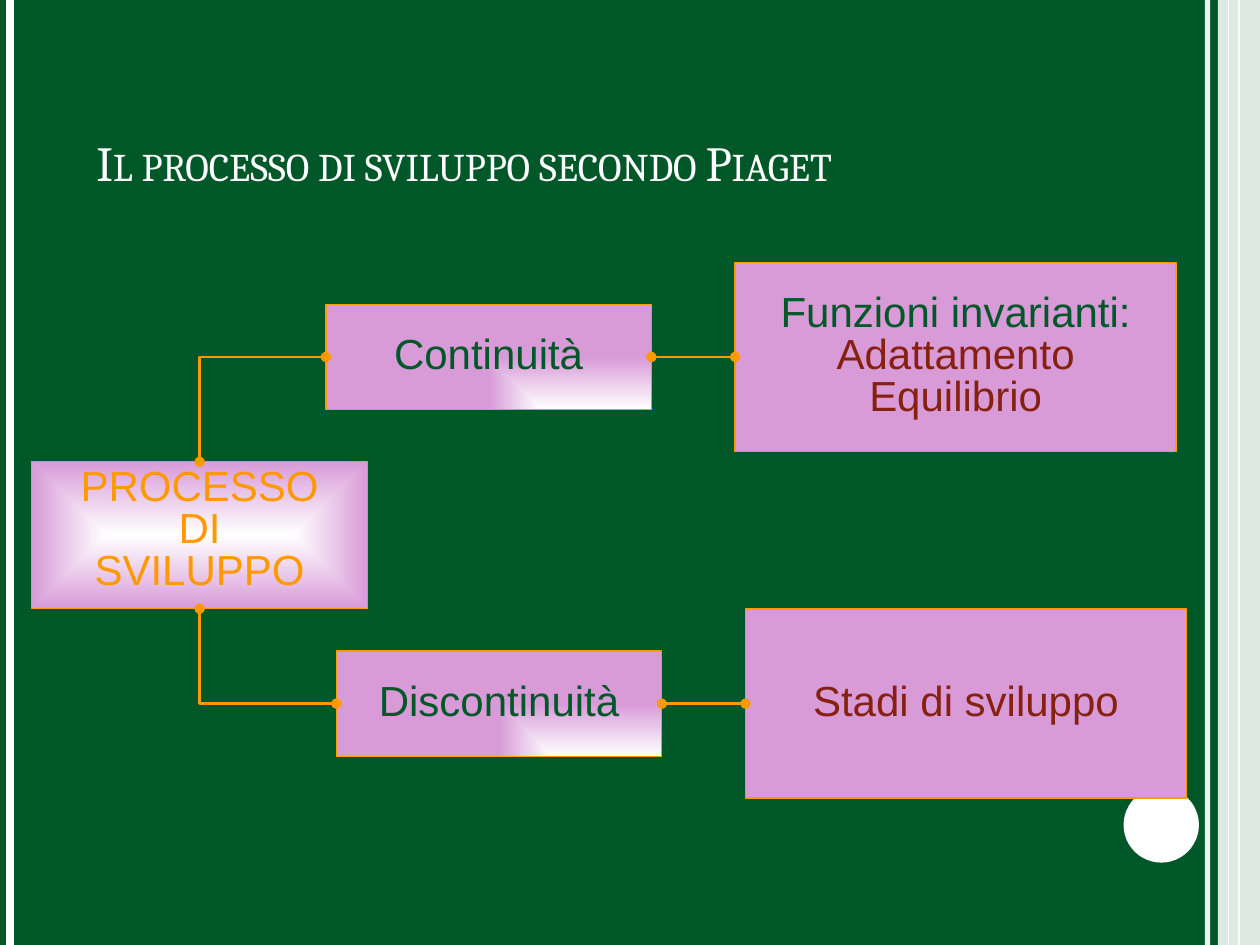
from dataclasses import dataclass

from lxml.etree import SubElement
from pptx import Presentation
from pptx.dml.color import RGBColor
from pptx.enum.shapes import MSO_CONNECTOR, MSO_SHAPE
from pptx.enum.text import MSO_ANCHOR, MSO_AUTO_SIZE, PP_ALIGN
from pptx.oxml.ns import qn
from pptx.util import Cm, Pt


@dataclass(frozen=True)
class Theme:
    """Colours, fonts and type sizes of the slide."""
    green: RGBColor = RGBColor.from_string("005828")
    white: RGBColor = RGBColor.from_string("FFFFFF")
    lilac: RGBColor = RGBColor.from_string("D89BD8")
    orange: RGBColor = RGBColor.from_string("FF9900")
    brown: RGBColor = RGBColor.from_string("862110")
    title_font: str = "Cambria"
    body_font: str = "Arial"
    title_size: Pt = Pt(28)
    body_size: Pt = Pt(24)


THEME = Theme()
TOP, LEFT, BOTTOM, RIGHT = range(4)
CORNER = {"l": "100000", "t": "100000"}
CENTRE = dict.fromkeys("ltrb", "50000")


def apply_format(target, values):
    """Set every attribute named in values on target."""
    for name, value in values.items():
        setattr(target, name, value)


def set_alpha(element, percent):
    """Make the colours below element partly transparent."""
    for colour in element.iter(qn("a:srgbClr")):
        SubElement(colour, qn("a:alpha"), val=str(percent * 1000))


def add_line(slide, ends, colour, weight, kind=MSO_CONNECTOR.STRAIGHT):
    """Add a connector without shadow between two points."""
    line = slide.shapes.add_connector(kind, *ends)
    line.line.color.rgb = colour
    line.line.width = Pt(weight)
    SubElement(line._element.spPr, qn("a:effectLst"))
    return line


def add_solid(slide, preset, box, colour):
    """Add a borderless shape with a plain fill."""
    shape = slide.shapes.add_shape(preset, *map(Cm, box))
    shape.shadow.inherit = False
    shape.fill.solid()
    shape.fill.fore_color.rgb = colour
    shape.line.fill.background()
    return shape


def add_frame(slide, width, height):
    """Place the edge stripes and the disc relative to the slide size."""
    def stripe(x, weight):
        return add_line(slide, (Cm(x), 0, Cm(x), Cm(height)), THEME.white, weight)

    set_alpha(stripe(width - 1.06, 3).line._ln, 93)
    stripe(0.21, 4.5)
    stripe(width - 0.42, 1.5)
    band = add_solid(slide, MSO_SHAPE.RECTANGLE, (width - 0.85, 0, 0.85, height), THEME.white)
    set_alpha(band._element.spPr, 87)
    stripe(width - 0.64, 0.75)
    add_solid(slide, MSO_SHAPE.OVAL, (width - 2.75, height - 3.18, 1.52, 1.52), THEME.white)


def add_title(slide, box, wording):
    """Move and format the title placeholder."""
    title = slide.shapes.title
    apply_format(title, dict(zip(("left", "top", "width", "height"), map(Cm, box))))
    frame = title.text_frame
    frame.text = wording
    apply_format(frame, {"vertical_anchor": MSO_ANCHOR.BOTTOM, "word_wrap": True,
                         "auto_size": MSO_AUTO_SIZE.SHAPE_TO_FIT_TEXT})
    paragraph = frame.paragraphs[0]
    paragraph.alignment = PP_ALIGN.LEFT
    run = paragraph.runs[0]
    apply_format(run.font, {"name": THEME.title_font, "size": THEME.title_size})
    run.font.color.rgb = THEME.white
    run.font._element.set("cap", "small")


def add_gradient(shape, kind, focus):
    """Fill shape with a white to lilac path gradient around focus."""
    shape.fill.gradient()
    for stop, position, colour in zip(shape.fill.gradient_stops, (0, 1),
                                      (THEME.white, THEME.lilac)):
        stop.position = position
        stop.color.rgb = colour
    gradient = shape._element.spPr.find(qn("a:gradFill"))
    gradient.remove(gradient.find(qn("a:lin")))
    path_fill = SubElement(gradient, qn("a:path"), path=kind)
    SubElement(path_fill, qn("a:fillToRect"), focus)


def add_box(slide, box, lines, indent=0, anchor=MSO_ANCHOR.MIDDLE, gradient=None):
    """Add an outlined box holding lines of (wording, colour)."""
    shape = add_solid(slide, MSO_SHAPE.RECTANGLE, box, THEME.lilac)
    if gradient:
        add_gradient(shape, *gradient)
    shape.line.color.rgb = THEME.orange
    shape.line.width = Pt(0.75)
    frame = shape.text_frame
    apply_format(frame, {"word_wrap": True, "vertical_anchor": anchor})
    frame.text = "\n".join(wording for wording, _ in lines)
    for paragraph, (_, colour) in zip(frame.paragraphs, lines):
        apply_format(paragraph, {"alignment": PP_ALIGN.CENTER, "line_spacing": Pt(24)})
        properties = paragraph._p.get_or_add_pPr()
        properties.set("marL", str(Cm(indent)))
        properties.set("indent", str(-Cm(indent)))
        font = paragraph.runs[0].font
        apply_format(font, {"name": THEME.body_font, "size": THEME.body_size})
        font.color.rgb = colour
    return shape


def join(slide, start, start_site, end, end_site, kind=MSO_CONNECTOR.STRAIGHT):
    """Join two boxes with an orange connector that has round ends."""
    link = add_line(slide, (0, 0, 0, 0), THEME.orange, 1.5, kind)
    link.begin_connect(start, start_site)
    link.end_connect(end, end_site)
    for tip in ("a:headEnd", "a:tailEnd"):
        SubElement(link.line._ln, qn(tip), type="oval")
    return link


def join_elbow(slide, root, site, label):
    """Join the top or bottom of root to the left of label with one bend."""
    link = join(slide, root, site, label, LEFT, MSO_CONNECTOR.ELBOW)
    across, along = link.width, link.height
    middle_x, middle_y = link.left + across // 2, link.top + along // 2
    apply_format(link, {"left": middle_x - along // 2, "top": middle_y - across // 2,
                        "width": along, "height": across})
    properties = link._element.spPr
    apply_format(properties.xfrm, {"rot": 270, "flipH": site == BOTTOM, "flipV": False})
    properties.find(qn("a:prstGeom")).set("prst", "bentConnector2")


def add_branch(slide, box, wording, details):
    """Place a label and its detail box inside box and return the label."""
    left, top, width, height = box
    label_width, label_height, detail_width = 6.56, 2.12, 8.89
    label = add_box(slide, (left, top + (height - label_height) / 2, label_width, label_height),
                    [(wording, THEME.green)], gradient=("rect", CORNER))
    detail = add_box(slide, (left + width - detail_width, top, detail_width, height),
                     details, indent=0.53)
    join(slide, label, RIGHT, detail, LEFT)
    return label


def add_process(slide, box):
    """Place the root box and its two branches inside box."""
    left, top, width, height = box
    branch_width, branch_height = 17.14, 3.81
    root_height = 2.96
    root = add_box(slide, (left, top + 4.02, 6.77, root_height),
                   [(word, THEME.orange) for word in ("PROCESSO", "DI", "SVILUPPO")],
                   indent=0.81, anchor=MSO_ANCHOR.TOP, gradient=("shape", CENTRE))
    branches = (
        (TOP, left + width - branch_width - 0.21, top, "Continuità",
         [("Funzioni invarianti:", THEME.green), ("Adattamento", THEME.brown),
          ("Equilibrio", THEME.brown)]),
        (BOTTOM, left + width - branch_width, top + height - branch_height, "Discontinuità",
         [("Stadi di sviluppo", THEME.brown)]),
    )
    for site, x, y, wording, details in branches:
        label = add_branch(slide, (x, y, branch_width, branch_height), wording, details)
        join_elbow(slide, root, site, label)


def main():
    """Build the slide and save it."""
    width, height = 25.4, 19.05
    deck = Presentation()
    apply_format(deck, {"slide_width": Cm(width), "slide_height": Cm(height)})
    slide = deck.slides.add_slide(deck.slide_layouts[5])
    slide.background.fill.solid()
    slide.background.fill.fore_color.rgb = THEME.green
    add_frame(slide, width, height)
    add_title(slide, (1.69, 2.54, 21.59, 1.45), "Il processo di sviluppo secondo Piaget")
    add_process(slide, (0.64, 5.29, 23.28, 10.8))
    deck.save("out.pptx")


if __name__ == "__main__":
    main()
